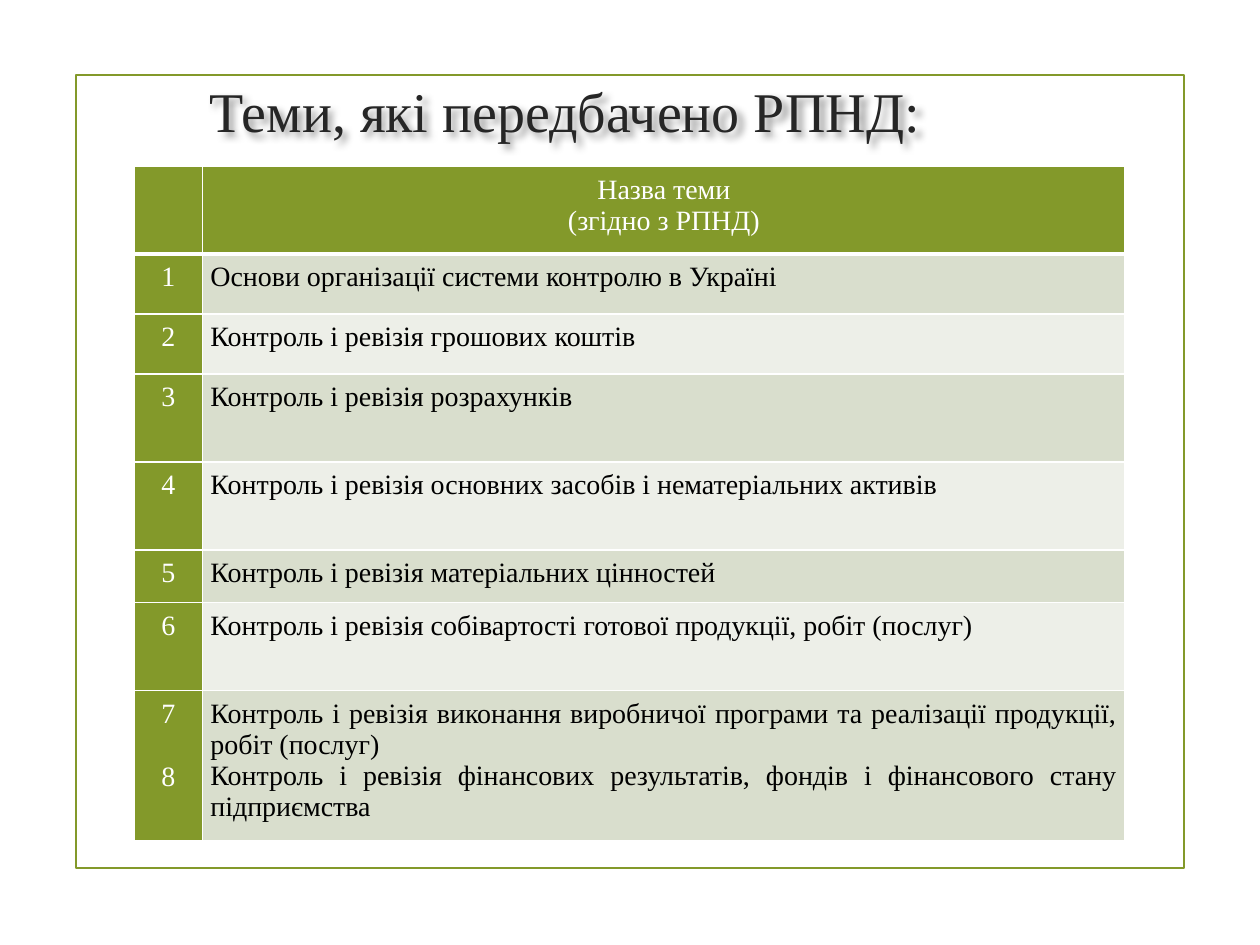
from lxml import etree
from pptx import Presentation
from pptx.dml.color import RGBColor
from pptx.enum.shapes import MSO_SHAPE
from pptx.enum.text import MSO_ANCHOR, PP_ALIGN
from pptx.oxml import parse_xml
from pptx.oxml.ns import nsdecls, qn
from pptx.util import Pt

RECTANGLE = MSO_SHAPE.RECTANGLE
MIDDLE = MSO_ANCHOR.MIDDLE
CENTER, JUSTIFY = PP_ALIGN.CENTER, PP_ALIGN.JUSTIFY

OLIVE = RGBColor(0x83, 0x99, 0x2A)
DARK_BAND = RGBColor(0xD9, 0xDE, 0xCD)
LIGHT_BAND = RGBColor(0xED, 0xEF, 0xE8)
INK = RGBColor(0x26, 0x26, 0x26)
BLACK = RGBColor(0, 0, 0)
WHITE = RGBColor(0xFF, 0xFF, 0xFF)
FONT = "Times New Roman"

TITLE = "Теми, які передбачено РПНД:"
HEADER = ["Назва теми", "(згідно з РПНД)"]
TOPICS = [
    (["1"], ["Основи організації системи контролю в Україні"]),
    (["2"], ["Контроль і ревізія грошових коштів"]),
    (["3"], ["Контроль і ревізія розрахунків"]),
    (["4"], ["Контроль і ревізія основних засобів і нематеріальних активів"]),
    (["5"], ["Контроль і ревізія матеріальних цінностей"]),
    (["6"], ["Контроль і ревізія собівартості готової продукції, робіт (послуг)"]),
    (["7", "8"], [
        "Контроль і ревізія виконання виробничої програми та реалізації продукції, робіт (послуг)",
        "Контроль і ревізія фінансових результатів, фондів і фінансового стану підприємства",
    ]),
]
ROW_HEIGHTS = [50, 34.3, 34.2, 50.3, 50.3, 30.1, 50.3, 79]
NUMBER_WIDTH = 39.3


def write_lines(text_frame, lines, size, color, alignment, gap=0):
    """Write one paragraph per line, with a gap between paragraphs."""
    for index, line in enumerate(lines):
        paragraph = text_frame.paragraphs[0] if index == 0 else text_frame.add_paragraph()
        paragraph.text = line
        paragraph.alignment = alignment
        if index and gap:
            paragraph.space_before = Pt(gap)
        font = paragraph.font
        font.name, font.size, font.bold = FONT, Pt(size), False
        font.color.rgb = color


def add_frame(slide, left, top, width, height):
    """Draw the thin olive frame around the content."""
    frame = slide.shapes.add_shape(RECTANGLE, Pt(left), Pt(top), Pt(width), Pt(height))
    frame.shadow.inherit = False
    frame.fill.background()
    frame.line.color.rgb = OLIVE
    frame.line.width = Pt(1.25)


def add_title(slide, left, top, width, height):
    """Place the centred title with its soft shadow."""
    title = slide.shapes.add_textbox(Pt(left), Pt(top), Pt(width), Pt(height))
    text_frame = title.text_frame
    text_frame.word_wrap = True
    text_frame.vertical_anchor = MIDDLE
    write_lines(text_frame, [TITLE], 32, INK, CENTER)
    title._element.spPr.append(parse_xml(
        f'<a:effectLst {nsdecls("a")}>'
        f'<a:outerShdw blurRad="{Pt(4)}" dist="{Pt(3)}" dir="2700000" algn="tl" rotWithShape="0">'
        '<a:srgbClr val="000000"><a:alpha val="40000"/></a:srgbClr>'
        '</a:outerShdw></a:effectLst>'))


def set_borders(cell, top, bottom):
    """Give a cell white borders, with the given top and bottom widths."""
    properties = cell._tc.get_or_add_tcPr()
    for side, width in (("L", 1), ("R", 1), ("T", top), ("B", bottom)):
        line = etree.SubElement(properties, qn(f"a:ln{side}"), w=str(Pt(width)))
        fill = etree.SubElement(line, qn("a:solidFill"))
        etree.SubElement(fill, qn("a:srgbClr"), val=str(WHITE))


def fill_cell(cell, lines, fill, color, alignment, gap=0):
    """Set the margins, fill and text of a cell."""
    cell.margin_left = cell.margin_right = Pt(4.5)
    cell.margin_top = cell.margin_bottom = Pt(4.5)
    cell.fill.solid()
    cell.fill.fore_color.rgb = fill
    write_lines(cell.text_frame, lines, 16, color, alignment, gap)


def add_topics_table(slide, left, top, width):
    """Build the numbered table of topics."""
    graphic_frame = slide.shapes.add_table(
        len(ROW_HEIGHTS), 2, Pt(left), Pt(top), Pt(width), Pt(sum(ROW_HEIGHTS)))
    table = graphic_frame.table
    table.columns[0].width = Pt(NUMBER_WIDTH)
    table.columns[1].width = Pt(width - NUMBER_WIDTH)
    for row_index, height in enumerate(ROW_HEIGHTS):
        table.rows[row_index].height = Pt(height)
        for cell in table.rows[row_index].cells:
            set_borders(cell, 3 if row_index == 1 else 1, 3 if row_index == 0 else 1)
    fill_cell(table.cell(0, 0), [""], OLIVE, WHITE, CENTER)
    fill_cell(table.cell(0, 1), HEADER, OLIVE, WHITE, CENTER)
    for row_index, (numbers, names) in enumerate(TOPICS, start=1):
        band = DARK_BAND if row_index % 2 else LIGHT_BAND
        fill_cell(table.cell(row_index, 0), numbers, OLIVE, WHITE, CENTER, gap=18)
        fill_cell(table.cell(row_index, 1), names, band, BLACK, JUSTIFY)


def main():
    """Build and save the presentation."""
    presentation = Presentation()
    presentation.slide_width, presentation.slide_height = Pt(720), Pt(540)
    slide = presentation.slides.add_slide(presentation.slide_layouts[6])
    add_frame(slide, 43.5, 42.75, 633, 453.25)
    add_title(slide, 25, 37.5, 596, 51)
    add_topics_table(slide, 76.5, 95.25, 566.5)
    presentation.save("out.pptx")


if __name__ == "__main__":
    main()
